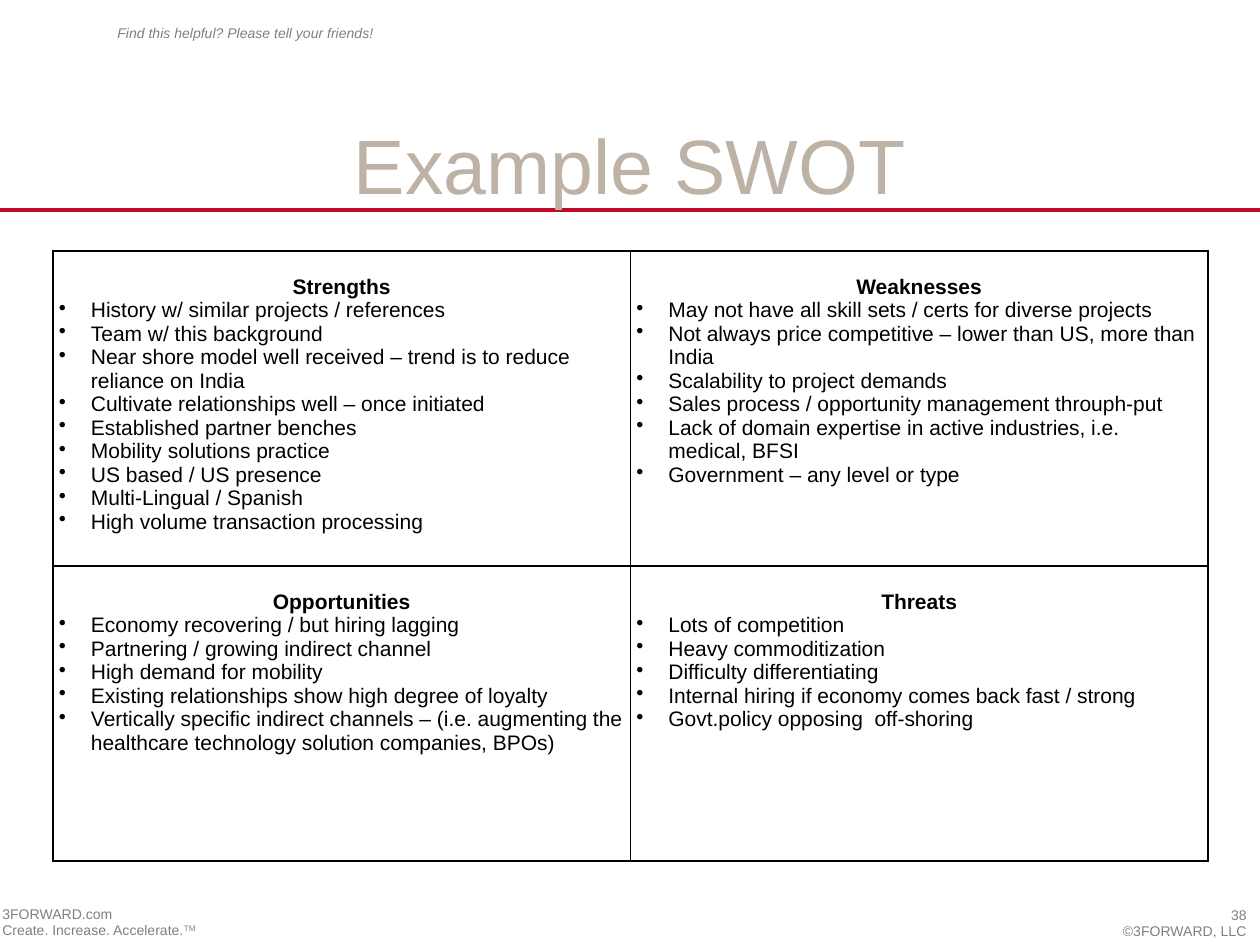
import lxml.etree
import pptx
import pptx.dml.color
import pptx.enum.shapes
import pptx.enum.text
import pptx.oxml.ns
import pptx.util

RGB = pptx.dml.color.RGBColor
ALIGN = pptx.enum.text.PP_ALIGN
ANCHOR = pptx.enum.text.MSO_ANCHOR
AUTO_SIZE = pptx.enum.text.MSO_AUTO_SIZE

BLACK = RGB(0x00, 0x00, 0x00)
GRAY = RGB(0x80, 0x80, 0x80)
RED = RGB(0xC2, 0x0A, 0x24)
TAUPE = RGB(0xBE, 0xB1, 0xA6)
FONT = "Arial"
OUTER_BORDER, INNER_BORDER = 1.5, 1

TITLE = "Example SWOT"
QUADRANTS = [
    [
        ("Strengths", [
            "History w/ similar projects / references",
            "Team w/ this background",
            "Near shore model well received – trend is to reduce reliance on India",
            "Cultivate relationships well – once initiated",
            "Established partner benches",
            "Mobility solutions practice",
            "US based / US presence",
            "Multi-Lingual / Spanish",
            "High volume transaction processing",
        ]),
        ("Weaknesses", [
            "May not have all skill sets / certs for diverse projects",
            "Not always price competitive – lower than US, more than India",
            "Scalability to project demands",
            "Sales process / opportunity management throuph-put",
            "Lack of domain expertise in active industries, i.e. medical, BFSI",
            "Government – any level or type",
        ]),
    ],
    [
        ("Opportunities", [
            "Economy recovering / but hiring lagging",
            "Partnering / growing indirect channel",
            "High demand for mobility",
            "Existing relationships show high degree of loyalty",
            "Vertically specific indirect channels – (i.e. augmenting the "
            "healthcare technology solution companies, BPOs)",
        ]),
        ("Threats", [
            "Lots of competition",
            "Heavy commoditization",
            "Difficulty differentiating",
            "Internal hiring if economy comes back fast / strong",
            "Govt.policy opposing  off-shoring",
        ]),
    ],
]
ROW_HEIGHTS = [315, 295]
TABLE_LEFT, TABLE_TOP, TABLE_WIDTH = 53, 251, 1155

NOTES = [
    ((105, 18, 388, 30), ALIGN.LEFT, True,
     [[("Find this helpful? Please tell your friends!", 0)]]),
    ((965, 900, 294, 43), ALIGN.RIGHT, False,
     [[("38", 0)], [("©3FORWARD, LLC", 0)]]),
    ((-10, 899, 462, 46), ALIGN.LEFT, False,
     [[("3FORWARD.com", 0)],
      [("Create. Increase. Accelerate.", 0), ("TM", 30000)]]),
]


def px(length):
    return pptx.util.Emu(round(length * 914400 / 126))


def add_span(para, text, size, color, bold=False, italic=False):
    span = para.add_run()
    span.text = text
    span.font.name = FONT
    span.font.size = pptx.util.Pt(size)
    span.font.color.rgb = color
    span.font.bold = bold
    span.font.italic = italic
    return span


def add_child(parent, tag, **attributes):
    return lxml.etree.SubElement(parent, pptx.oxml.ns.qn(tag), **attributes)


def add_rule(page):
    rule = page.shapes.add_connector(
        pptx.enum.shapes.MSO_CONNECTOR.STRAIGHT, 0, px(210), px(1260), px(210))
    rule.line.color.rgb = RED
    rule.line.width = pptx.util.Pt(2.25)
    add_child(rule._element.spPr, "a:effectLst")
    page.shapes._spTree.insert(2, rule._element)


def set_title(page):
    title = page.shapes.title
    title.left, title.top, title.width, title.height = map(px, (0, 116, 1260, 95))
    frame = title.text_frame
    frame.auto_size = AUTO_SIZE.NONE
    frame.vertical_anchor = ANCHOR.MIDDLE
    para = frame.paragraphs[0]
    para.alignment = ALIGN.CENTER
    add_span(para, TITLE, 44, TAUPE)


def add_note(page, place, alignment, italic, lines):
    frame = page.shapes.add_textbox(*map(px, place)).text_frame
    frame.word_wrap = True
    for index, line in enumerate(lines):
        para = frame.add_paragraph() if index else frame.paragraphs[0]
        para.alignment = alignment
        for text, baseline in line:
            span = add_span(para, text, 8, GRAY, italic=italic)
            if baseline:
                span._r.get_or_add_rPr().set("baseline", str(baseline))


def set_borders(cell, widths):
    properties = cell._tc.get_or_add_tcPr()
    for side, width in widths.items():
        border = add_child(properties, f"a:ln{side}", w=str(pptx.util.Pt(width)))
        fill = add_child(border, "a:solidFill")
        add_child(fill, "a:srgbClr", val=str(BLACK))


def fill_cell(cell, heading, points):
    cell.margin_left = cell.margin_right = px(6)
    cell.margin_top, cell.margin_bottom = px(24), 0
    cell.vertical_anchor = ANCHOR.TOP
    para = cell.text_frame.paragraphs[0]
    para.alignment = ALIGN.CENTER
    add_span(para, heading, 12, BLACK, bold=True)
    for point in points:
        para = cell.text_frame.add_paragraph()
        properties = para._p.get_or_add_pPr()
        properties.set("marL", str(px(32)))
        properties.set("indent", str(px(-32)))
        add_child(properties, "a:buChar", char="•")
        add_span(para, point, 12, BLACK)


def add_swot(page):
    rows, columns = len(QUADRANTS), len(QUADRANTS[0])
    table = page.shapes.add_table(
        rows, columns, px(TABLE_LEFT), px(TABLE_TOP),
        px(TABLE_WIDTH), px(sum(ROW_HEIGHTS))).table
    table.first_row = table.horz_banding = False
    for column in table.columns:
        column.width = px(TABLE_WIDTH / columns)
    for r, quadrants in enumerate(QUADRANTS):
        table.rows[r].height = px(ROW_HEIGHTS[r])
        for c, (heading, points) in enumerate(quadrants):
            cell = table.cell(r, c)
            fill_cell(cell, heading, points)
            on_edge = {"L": c == 0, "R": c == columns - 1,
                       "T": r == 0, "B": r == rows - 1}
            set_borders(cell, {side: OUTER_BORDER if edge else INNER_BORDER
                               for side, edge in on_edge.items()})
            cell.fill.background()


def main():
    deck = pptx.Presentation()
    deck.slide_width, deck.slide_height = px(1260), px(945)
    page = deck.slides.add_slide(deck.slide_layouts[5])
    set_title(page)
    add_rule(page)
    add_swot(page)
    for note in NOTES:
        add_note(page, *note)
    deck.save("out.pptx")


if __name__ == "__main__":
    main()
